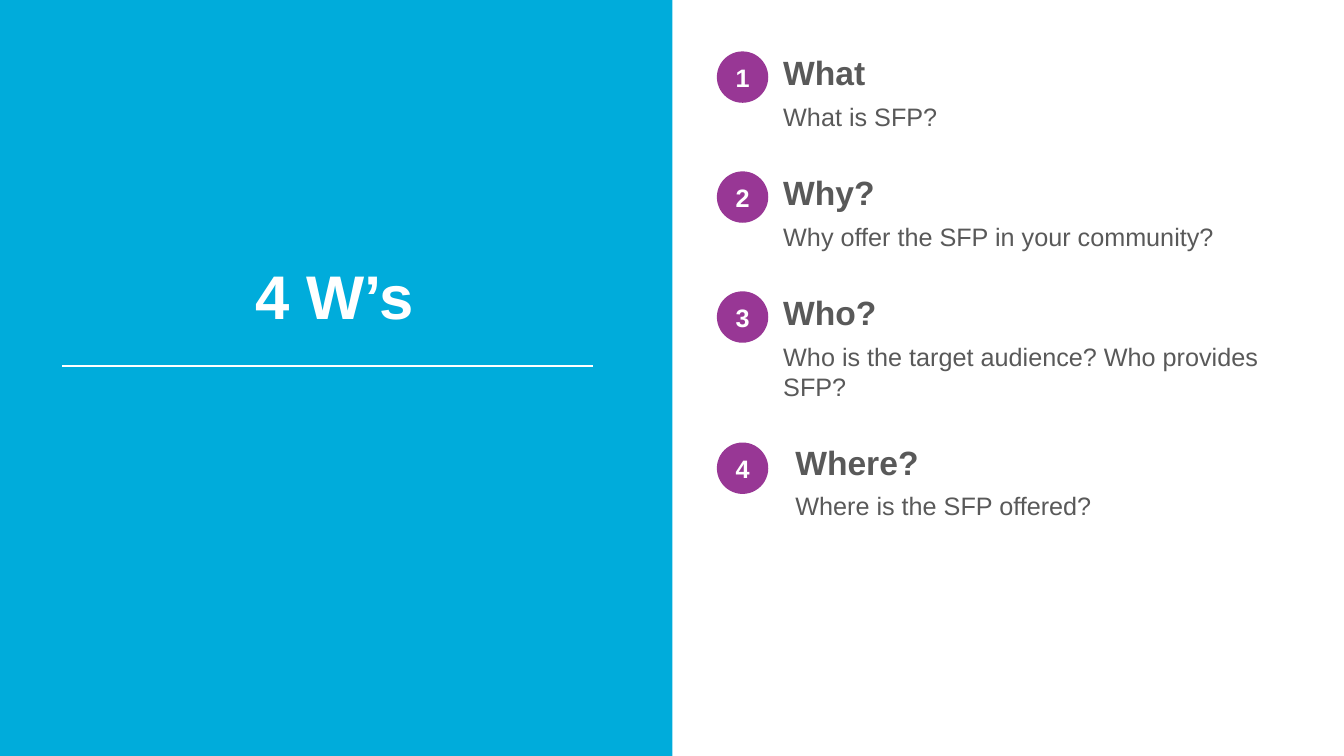
from pptx import Presentation
from pptx.dml.color import RGBColor
from pptx.enum.shapes import MSO_CONNECTOR, MSO_SHAPE
from pptx.enum.text import MSO_ANCHOR, PP_ALIGN
from pptx.oxml.ns import qn
from pptx.util import Inches, Pt
from lxml.etree import SubElement

BLUE = RGBColor(0x00, 0xAC, 0xDB)
PURPLE = RGBColor(0x98, 0x37, 0x95)
WHITE = RGBColor(0xFF, 0xFF, 0xFF)
GREY = RGBColor(0x59, 0x59, 0x59)
FONT = "Arial"
BADGE_LEFT, BADGE_SIZE = 7.11, 0.51
TOPICS = [
    ("What", "What is SFP?", 0.51, 7.67, 0.47),
    ("Why?", "Why offer the SFP in your community?", 1.7, 7.67, 1.66),
    ("Who?", "Who is the target audience? Who provides SFP?", 2.89, 7.67, 2.85),
    ("Where?", "Where is the SFP offered?", 4.39, 7.79, 4.33),
]


def style_text(paragraph, size, color, bold, align=PP_ALIGN.LEFT):
    paragraph.alignment = align
    for span in paragraph.runs:
        span.font.name = FONT
        span.font.size = Pt(size)
        span.font.bold = bold
        span.font.color.rgb = color


def add_filled_shape(page, kind, left, top, width, height, color):
    shape = page.shapes.add_shape(
        kind, Inches(left), Inches(top), Inches(width), Inches(height))
    shape.shadow.inherit = False
    shape.fill.solid()
    shape.fill.fore_color.rgb = color
    shape.line.fill.background()
    return shape


def set_title(page, text):
    title = page.shapes.title
    title.left, title.top = Inches(0.6), Inches(1.26)
    title.width, title.height = Inches(5.44), Inches(2.08)
    frame = title.text_frame
    frame.text = text
    frame.vertical_anchor = MSO_ANCHOR.BOTTOM
    style_text(frame.paragraphs[0], 44, WHITE, True, PP_ALIGN.CENTER)


def add_rule(page, left, right, top):
    rule = page.shapes.add_connector(
        MSO_CONNECTOR.STRAIGHT, Inches(left), Inches(top), Inches(right), Inches(top))
    rule.line.color.rgb = WHITE
    rule.line.width = Pt(1.5)
    SubElement(rule._element.spPr, qn("a:effectLst"))


def add_badge(page, number, top):
    badge = add_filled_shape(
        page, MSO_SHAPE.OVAL, BADGE_LEFT, top, BADGE_SIZE, BADGE_SIZE, PURPLE)
    frame = badge.text_frame
    frame.margin_left = frame.margin_right = Inches(0.07)
    frame.margin_top = frame.margin_bottom = Inches(0.03)
    frame.vertical_anchor = MSO_ANCHOR.MIDDLE
    frame.text = str(number)
    style_text(frame.paragraphs[0], 18, WHITE, True, PP_ALIGN.CENTER)


def add_topic(page, heading, question, left, top):
    box = page.shapes.add_textbox(
        Inches(left), Inches(top), Inches(5.13), Inches(1.59))
    frame = box.text_frame
    frame.word_wrap = True
    frame.text = f"{heading}\n{question}"
    for paragraph, size, bold in zip(frame.paragraphs, (24, 18), (True, False)):
        paragraph.space_after = Pt(6)
        style_text(paragraph, size, GREY, bold)


def main():
    deck = Presentation()
    deck.slide_width, deck.slide_height = Inches(13.33), Inches(7.5)
    page = deck.slides.add_slide(deck.slide_layouts.get_by_name("Title Only"))
    page.background.fill.solid()
    page.background.fill.fore_color.rgb = BLUE
    add_filled_shape(page, MSO_SHAPE.RECTANGLE, 6.67, 0, 6.66, 7.5, WHITE)
    set_title(page, "4 W’s")
    add_rule(page, 0.62, 5.88, 3.63)
    for number, topic in enumerate(TOPICS, start=1):
        heading, question, badge_top, left, top = topic
        add_badge(page, number, badge_top)
        add_topic(page, heading, question, left, top)
    deck.save("out.pptx")


if __name__ == "__main__":
    main()
